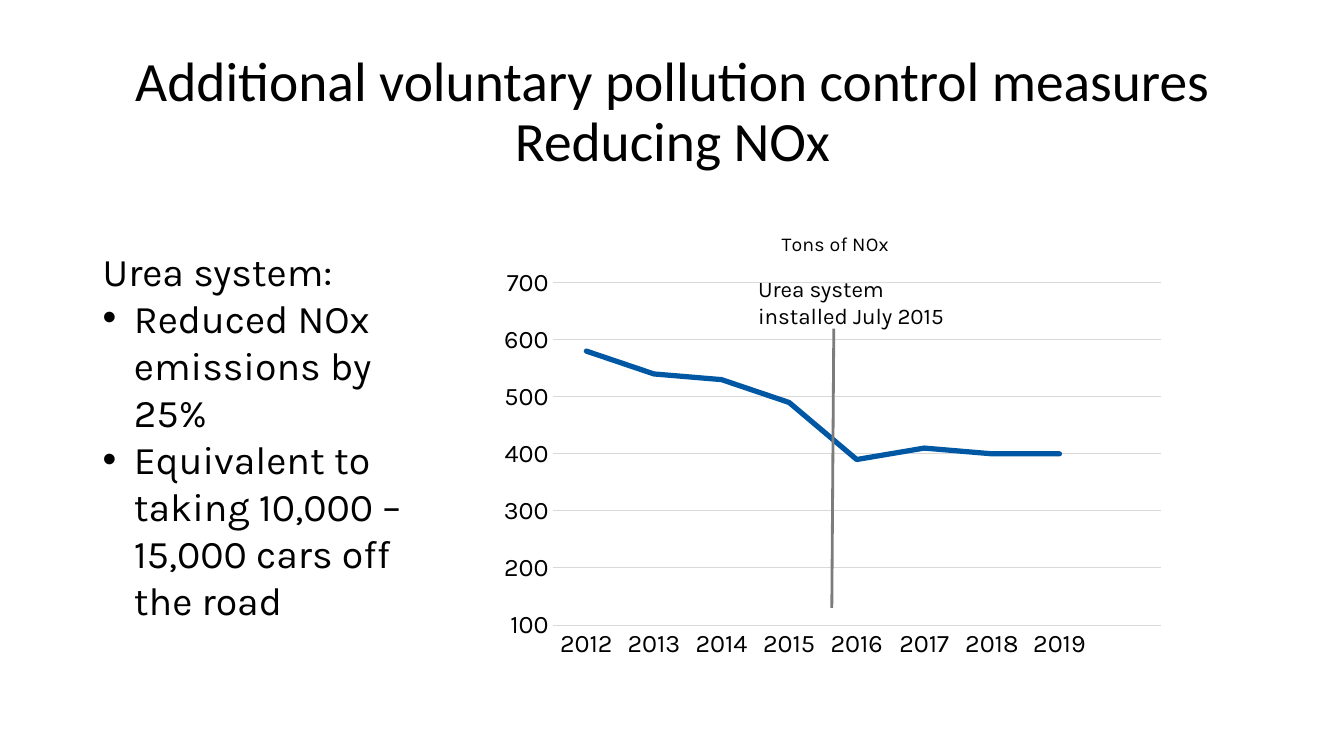
from lxml import etree
from pptx import Presentation
from pptx import util as u
from pptx.chart.data import CategoryChartData
from pptx.dml.color import RGBColor
from pptx.enum import chart as ch, shapes, text
from pptx.oxml import parse_xml
from pptx.oxml.ns import nsdecls, qn

PX = 9144  # EMU in one px, 100 px to the inch
BLACK = RGBColor(0x00, 0x00, 0x00)
BLUE = RGBColor(0x00, 0x58, 0xA4)
GRID = RGBColor(0xD9, 0xD9, 0xD9)
GREY = RGBColor(0x7C, 0x7C, 0x7C)
HEADING, BODY = "Calibri", "Karla"

YEARS = [str(year) for year in range(2012, 2020)] + [""]
TONS = [580, 540, 530, 490, 390, 410, 400, 400, None]
BENEFITS = ["Reduced NOx emissions by 25%",
            "Equivalent to taking 10,000 – 15,000 cars off the road"]


def px(*lengths):
    return [u.Emu(length * PX) for length in lengths]


def set_font(font, name, size):
    font.name, font.size = name, u.Pt(size)
    font.color.rgb = BLACK


def add_text(page, box, lines, name, size):
    frame = page.shapes.add_textbox(*px(*box)).text_frame
    frame.word_wrap = True
    frame.text = "\n".join(lines)
    for para in frame.paragraphs:
        set_font(para.font, name, size)
    return frame


def add_title(page, box):
    frame = add_text(page, box, ["Additional voluntary pollution control measures\vReducing NOx"],
                     HEADING, 39.6)
    frame.vertical_anchor = text.MSO_ANCHOR.MIDDLE
    para = frame.paragraphs[0]
    para.alignment = text.PP_ALIGN.CENTER
    para.line_spacing = 0.9


def add_benefits(page, box):
    frame = add_text(page, box, ["Urea system:"] + BENEFITS, BODY, 28)
    indent = 31 * PX
    for para in frame.paragraphs[1:]:
        props = para._p.get_or_add_pPr()
        props.set("marL", str(indent))
        props.set("indent", str(-indent))
        props.insert_element_before(
            parse_xml(f'<a:buFont {nsdecls("a")} typeface="Arial"/>'), "a:defRPr")
        props.insert_element_before(
            parse_xml(f'<a:buChar {nsdecls("a")} char="•"/>'), "a:defRPr")


def place(element, before, target="", **fractions):
    """Give a chart part a manual layout, in fractions of the chart."""
    for old in element.findall(qn("c:layout")):
        element.remove(old)
    modes = "".join(f'<c:{side}Mode val="edge"/>' for side in "xy")
    sizes = "".join(f'<c:{key} val="{value}"/>' for key, value in fractions.items())
    layout = parse_xml(f'<c:layout {nsdecls("c")}><c:manualLayout>{target}{modes}{sizes}'
                       '</c:manualLayout></c:layout>')
    element.find(qn(before)).addprevious(layout)


def add_nox_chart(page, box):
    data = CategoryChartData()
    data.categories = YEARS
    data.add_series("Series 1", TONS)
    chart = page.shapes.add_chart(ch.XL_CHART_TYPE.LINE, *px(*box), data).chart
    set_font(chart.font, HEADING, 10)
    chart.has_legend = False

    # Title and plot area
    chart.has_title = True
    chart.chart_title.include_in_layout = False
    chart.chart_title.text_frame.text = "Tons of NOx"
    title_font = chart.chart_title.text_frame.paragraphs[0].font
    set_font(title_font, BODY, 14)
    title_font.bold = False
    place(chart.chart_title._element, "c:overlay", x=0.42, y=0.04)
    place(chart._chartSpace.chart.plotArea, "c:lineChart",
          '<c:layoutTarget val="inner"/>', x=0.09, y=0.16, w=0.89, h=0.75)

    # Axes
    years, tons = chart.category_axis, chart.value_axis
    for axis in (years, tons):
        axis.major_tick_mark = axis.minor_tick_mark = ch.XL_TICK_MARK.NONE
        set_font(axis.tick_labels.font, BODY, 18)
    tons.minimum_scale, tons.maximum_scale, tons.major_unit = 100, 700, 100
    tons.format.line.fill.background()
    for line in (years.format.line, tons.major_gridlines.format.line):
        line.color.rgb = GRID
        line.width = u.Pt(0.75)

    # Line
    chart.plots[0].vary_by_categories = False
    series = chart.plots[0].series[0]
    series.smooth = False
    series.marker.style = ch.XL_MARKER_STYLE.NONE
    series.format.line.color.rgb = BLUE
    series.format.line.width = u.Pt(3.75)
    series.format.line._ln.set("cap", "rnd")


def add_installation(page, box):
    left, top, width, height = box
    marker = page.shapes.add_connector(
        shapes.MSO_CONNECTOR.STRAIGHT,
        *px(left + 85, top + 58, left + 83, top + 335))
    marker.line.color.rgb = GREY
    marker.line.width = u.Pt(2)
    etree.SubElement(marker._element.spPr, qn("a:effectLst"))
    add_text(page, box, ["Urea system installed July 2015"], BODY, 16)


def main():
    deck = Presentation()
    deck.slide_width, deck.slide_height = px(1333, 750)
    page = deck.slides.add_slide(deck.slide_layouts[6])
    add_title(page, (92, 40, 1150, 145))
    add_benefits(page, (92, 240, 362, 340))
    add_nox_chart(page, (487, 208, 678, 453))
    add_installation(page, (742, 268, 216, 64))
    deck.save("out.pptx")


if __name__ == "__main__":
    main()
